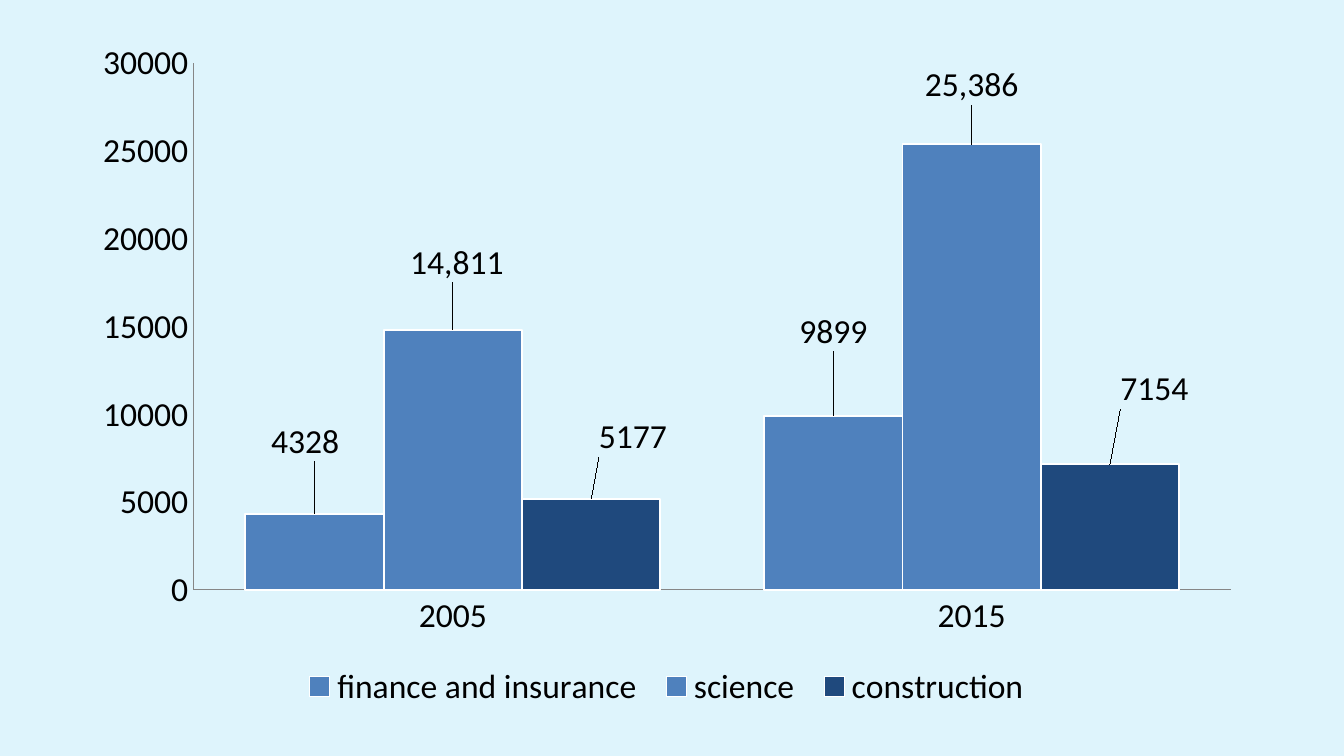
from lxml import etree
from pptx import Presentation
from pptx import util as u
from pptx.chart.data import CategoryChartData
from pptx.dml.color import RGBColor
from pptx.enum import chart as ch
from pptx.oxml.ns import qn

COLORS = {"background": "DEF4FC", "text": "000000", "axis": "868686",
          "edge": "FFFFFF", "blue": "4F81BD", "navy": "1F497D"}
YEARS = ["2005", "2015"]
# name, values, fill, number format, label shift in inches per year
SECTORS = [
    ("finance and insurance ", (4328, 9899), "blue", "General",
     ((-0.07, -0.35), (0, -0.44))),
    ("science ", (14811, 25386), "blue", "#,##0",
     ((0.03, -0.31), (0, -0.25))),
    ("construction", (5177, 7154), "navy", "General",
     ((0.31, -0.27), (0.33, -0.37))),
]
# Inches from the corner of the chart
PLOT_AREA = {"x": 0.85, "y": 0.26, "w": 7.72, "h": 3.92}
C15 = "http://schemas.microsoft.com/office/drawing/2012/chart"


def rgb(name):
    return RGBColor.from_string(COLORS[name])


def set_all(target, **values):
    for name, value in values.items():
        setattr(target, name, value)


def make_layout(modes, lengths, width, height):
    """Return a c:layout element; lengths become shares of the chart size."""
    layout = etree.Element(qn("c:layout"))
    manual = etree.SubElement(layout, qn("c:manualLayout"))
    shares = {tag: length / (width if tag in "xw" else height)
              for tag, length in lengths.items()}
    for tag, value in {**modes, **shares}.items():
        etree.SubElement(manual, qn(f"c:{tag}")).set("val", str(value))
    return layout


def hide_leader_lines(labels):
    extensions = etree.SubElement(labels, qn("c:extLst"))
    extension = etree.SubElement(
        extensions, qn("c:ext"), nsmap={"c15": C15},
        uri="{CE6537A1-D6FC-4f65-9D91-7224C49458BB}")
    etree.SubElement(extension, f"{{{C15}}}showLeaderLines", val="0")


def style_axes(chart):
    for axis in (chart.category_axis, chart.value_axis):
        set_all(axis, has_major_gridlines=False,
                major_tick_mark=ch.XL_TICK_MARK.NONE,
                minor_tick_mark=ch.XL_TICK_MARK.NONE)
        axis.format.line.color.rgb = rgb("axis")
        axis.format.line.width = u.Pt(0.75)
    set_all(chart.value_axis, minimum_scale=0, maximum_scale=30000,
            major_unit=5000)
    set_all(chart.value_axis.tick_labels, number_format="General",
            number_format_is_linked=False)


def style_series(series, fill, number_format, shifts, width, height):
    series.format.fill.solid()
    series.format.fill.fore_color.rgb = rgb(fill)
    series.format.line.color.rgb = rgb("edge")
    series.format.line.width = u.Pt(1)
    outside = ch.XL_LABEL_POSITION.OUTSIDE_END
    set_all(series.data_labels, show_value=True, position=outside,
            number_format=number_format, number_format_is_linked=False)

    # Labels moved away from their columns
    for year in range(len(shifts)):
        series.points[year].data_label.position = outside
    labels = series.data_labels._element
    for label, (dx, dy) in zip(labels.findall(qn("c:dLbl")), shifts):
        layout = make_layout({}, {"x": dx, "y": dy}, width, height)
        label.find(qn("c:idx")).addnext(layout)
        layout.addnext(etree.Element(
            qn("c:numFmt"), formatCode=number_format, sourceLinked="0"))
    hide_leader_lines(labels)


def add_sector_chart(slide, left, top, width, height):
    data = CategoryChartData()
    data.categories = YEARS
    for name, values, *_ in SECTORS:
        data.add_series(name, values)
    chart = slide.shapes.add_chart(
        ch.XL_CHART_TYPE.COLUMN_CLUSTERED, u.Inches(left), u.Inches(top),
        u.Inches(width), u.Inches(height), data).chart
    set_all(chart.font, name="Calibri", size=u.Pt(18))
    chart.font.color.rgb = rgb("text")
    set_all(chart, has_title=False, has_legend=True)
    set_all(chart.legend, position=ch.XL_LEGEND_POSITION.BOTTOM,
            include_in_layout=False)

    # Plot
    plot = chart.plots[0]
    set_all(plot, gap_width=75, overlap=0, vary_by_categories=False)
    area = chart._chartSpace.chart.plotArea
    for old in area.findall(qn("c:layout")):
        area.remove(old)
    modes = {"layoutTarget": "inner", "xMode": "edge", "yMode": "edge"}
    area.insert(0, make_layout(modes, PLOT_AREA, width, height))
    style_axes(chart)
    for series, (_, _, *style) in zip(plot.series, SECTORS):
        style_series(series, *style, width, height)


def main():
    deck = Presentation()
    # Widescreen, 16:9
    set_all(deck, slide_width=u.Inches(10), slide_height=u.Inches(10) * 9 // 16)
    slide = deck.slides.add_slide(deck.slide_layouts[6])
    slide.background.fill.solid()
    slide.background.fill.fore_color.rgb = rgb("background")
    add_sector_chart(slide, 0.59, 0.21, 8.74, 5.1)
    deck.save("out.pptx")


if __name__ == "__main__":
    main()
